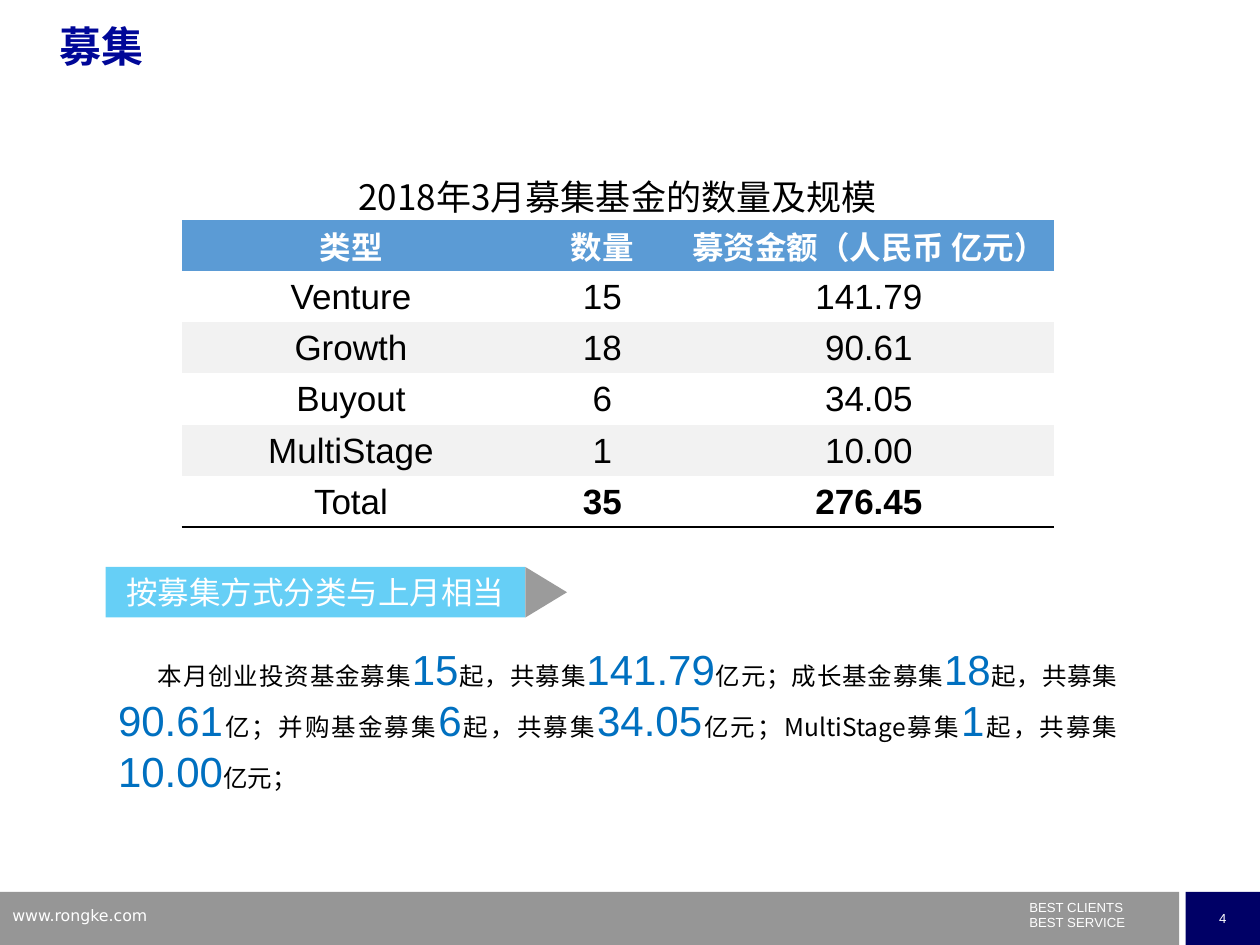
from lxml import etree
from pptx import Presentation
from pptx.dml.color import RGBColor
from pptx.enum import shapes, text
from pptx.oxml import ns
from pptx.util import Cm, Pt

WHITE = RGBColor(0xFF, 0xFF, 0xFF)
BLACK = RGBColor(0, 0, 0)
TITLE_BLUE = RGBColor(0x00, 0x07, 0x98)
NUMBER_BLUE = RGBColor(0x00, 0x70, 0xC0)
HEADER_BLUE = RGBColor(0x5B, 0x9B, 0xD5)
BAND_GREY = RGBColor(0xF2, 0xF2, 0xF2)
SKY = RGBColor(0x00, 0xB0, 0xF0)
DARK_GREY = RGBColor(0x59, 0x59, 0x59)
FOOTER_GREY = RGBColor(0x96, 0x96, 0x96)
NAVY = RGBColor(0x00, 0x00, 0x66)

SANS, CJK, CJK_JP = "Arial", "Noto Sans CJK SC", "Noto Sans CJK JP"
NO_STYLE = "{2D5ABB26-0587-4C30-8999-92F81FD0307C}"

ROWS = [
    ("类型", "数量", "募资金额（人民币 亿元）"),
    ("Venture", "15", "141.79"),
    ("Growth", "18", "90.61"),
    ("Buyout", "6", "34.05"),
    ("MultiStage", "1", "10.00"),
    ("Total", "35", "276.45"),
]
# Words and highlighted figures alternate
SUMMARY = [
    "本月创业投资基金募集", "15", "起，共募集", "141.79", "亿元；成长基金募集", "18",
    "起，共募集", "90.61", "亿；并购基金募集", "6", "起，共募集", "34.05",
    "亿元；MultiStage募集", "1", "起，共募集", "10.00", "亿元；",
]


def add_text(p, words, size=20, font=SANS, color=BLACK, bold=False, align=None):
    """Append a formatted run to a paragraph."""
    r = p.add_run()
    r.text = words
    r.font.size, r.font.name, r.font.bold = Pt(size), font, bold
    r.font.color.rgb = color
    ea = etree.SubElement(r.font._element, ns.qn("a:ea"))
    ea.set("typeface", CJK if font == SANS else font)
    if align is not None:
        p.alignment = align


def add_box(parent, kind, box, color, alpha=None):
    sp = parent.add_shape(kind, *(Cm(v) for v in box))
    sp.shadow.inherit = False
    sp.line.fill.background()
    sp.fill.solid()
    sp.fill.fore_color.rgb = color
    if alpha:
        clr = sp._element.spPr.find(".//" + ns.qn("a:srgbClr"))
        etree.SubElement(clr, ns.qn("a:alpha")).set("val", str(alpha * 1000))
    sp.text_frame.vertical_anchor = text.MSO_ANCHOR.MIDDLE
    return sp


def add_textbox(s, box):
    tf = s.shapes.add_textbox(*(Cm(v) for v in box)).text_frame
    tf.word_wrap = True
    return tf


def add_footer(s, left, top, width, height):
    rect = shapes.MSO_SHAPE.RECTANGLE
    page_w, gap = 1.5, 0.13
    page_x = left + width - page_w
    add_box(s.shapes, rect, (left, top, page_x - gap - left, height), FOOTER_GREY)
    # Page number
    tf = add_box(s.shapes, rect, (page_x, top, page_w, height), NAVY).text_frame
    tf.word_wrap = False
    add_text(tf.paragraphs[0], "4", size=7.5, color=WHITE, align=text.PP_ALIGN.CENTER)
    # Slogan
    tf = add_textbox(s, (left + 20.5, top + 0.16, 3.81, 0.74))
    for i, line in enumerate(("BEST CLIENTS", "BEST SERVICE")):
        p = tf.add_paragraph() if i else tf.paragraphs[0]
        p.line_spacing = 0.5
        if i:
            p.space_before = Pt(4.3)
        add_text(p, line, size=7.5, color=WHITE)
    # Web address
    tf = add_textbox(s, (left, top + 0.16, 6.1, 0.66))
    add_text(tf.paragraphs[0], "www.rongke.com", size=9, font="DejaVu Sans", color=WHITE)


def add_title(s, left, top, width, height):
    sp = s.shapes.title
    sp.left, sp.top, sp.width, sp.height = Cm(left), Cm(top), Cm(width), Cm(height)
    tf = sp.text_frame
    tf.auto_size = text.MSO_AUTO_SIZE.NONE
    tf.vertical_anchor = text.MSO_ANCHOR.TOP
    p = tf.paragraphs[0]
    p.line_spacing = 0.9
    add_text(p, "募集", size=24, color=TITLE_BLUE, bold=True, align=text.PP_ALIGN.LEFT)


def fill_cell(cell, words, fill=None, **fmt):
    cell.margin_left = cell.margin_right = cell.margin_top = Cm(0.03)
    cell.margin_bottom = 0
    cell.vertical_anchor = text.MSO_ANCHOR.MIDDLE
    if fill is None:
        cell.fill.background()
    else:
        cell.fill.solid()
        cell.fill.fore_color.rgb = fill
    add_text(cell.text_frame.paragraphs[0], words, align=text.PP_ALIGN.CENTER, **fmt)


def underline_cell(cell):
    ln = etree.Element(ns.qn("a:lnB"), w=str(Pt(1)))
    solid = etree.SubElement(ln, ns.qn("a:solidFill"))
    etree.SubElement(solid, ns.qn("a:srgbClr")).set("val", str(BLACK))
    cell._tc.get_or_add_tcPr().insert(0, ln)


def add_fund_table(s, left, top, width, height):
    n = len(ROWS) + 1
    table = s.shapes.add_table(n, 3, Cm(left), Cm(top), Cm(width), Cm(height)).table
    table._tbl.tblPr.find(ns.qn("a:tableStyleId")).text = NO_STYLE
    for col, share in zip(table.columns, (2.69, 1.3, 2.93)):
        col.width = Cm(width * share / 6.92)
    for row in table.rows:
        row.height = Cm(height / n)
    # Caption row
    table.cell(0, 0).merge(table.cell(0, 2))
    fill_cell(table.cell(0, 0), "2018年3月募集基金的数量及规模", font=CJK_JP)
    # Header, banded rows and total
    for i, values in enumerate(ROWS):
        total = i == len(ROWS) - 1
        for j, value in enumerate(values):
            cell = table.cell(i + 1, j)
            if i == 0:
                fill_cell(cell, value, HEADER_BLUE, size=18, font=CJK, color=WHITE, bold=True)
            else:
                band = BAND_GREY if i % 2 == 0 else None
                fill_cell(cell, value, band, bold=total and j > 0)
            if total:
                underline_cell(cell)


def add_banner(s, left, top, width, height):
    group = s.shapes.add_group_shape().shapes
    sp = add_box(group, shapes.MSO_SHAPE.RECTANGLE, (left, top, width, height), SKY, 60)
    add_text(sp.text_frame.paragraphs[0], "按募集方式分类与上月相当", size=18, font=CJK,
             color=WHITE, align=text.PP_ALIGN.CENTER)
    # Arrow tip, turned to point right from the banner's end
    depth = 0.84
    shift = (height - depth) / 2
    tip = add_box(group, shapes.MSO_SHAPE.ISOSCELES_TRIANGLE,
                  (left + width - shift, top + shift, height, depth), DARK_GREY, 60)
    tip.rotation = 90


def add_summary(s, left, top, width, height):
    p = add_textbox(s, (left, top, width, height)).paragraphs[0]
    p._p.get_or_add_pPr().set("indent", str(Cm(0.8)))
    p.alignment = text.PP_ALIGN.JUSTIFY
    p.line_spacing = Pt(29)
    for i, words in enumerate(SUMMARY):
        if i % 2:
            add_text(p, words, size=24, color=NUMBER_BLUE)
        else:
            add_text(p, words, size=14, font=CJK)


def main():
    prs = Presentation()
    prs.slide_width, prs.slide_height = Cm(25.4), Cm(19.05)
    s = prs.slides.add_slide(prs.slide_layouts[5])
    add_footer(s, 0, 17.98, 25.4, 1.07)
    add_summary(s, 2.13, 12.85, 20.65, 3.33)
    add_banner(s, 2.13, 11.43, 8.46, 1.02)
    add_title(s, 0.94, 0.41, 22.86, 1.78)
    add_fund_table(s, 3.66, 3.4, 17.58, 7.23)
    prs.save("out.pptx")


if __name__ == "__main__":
    main()
